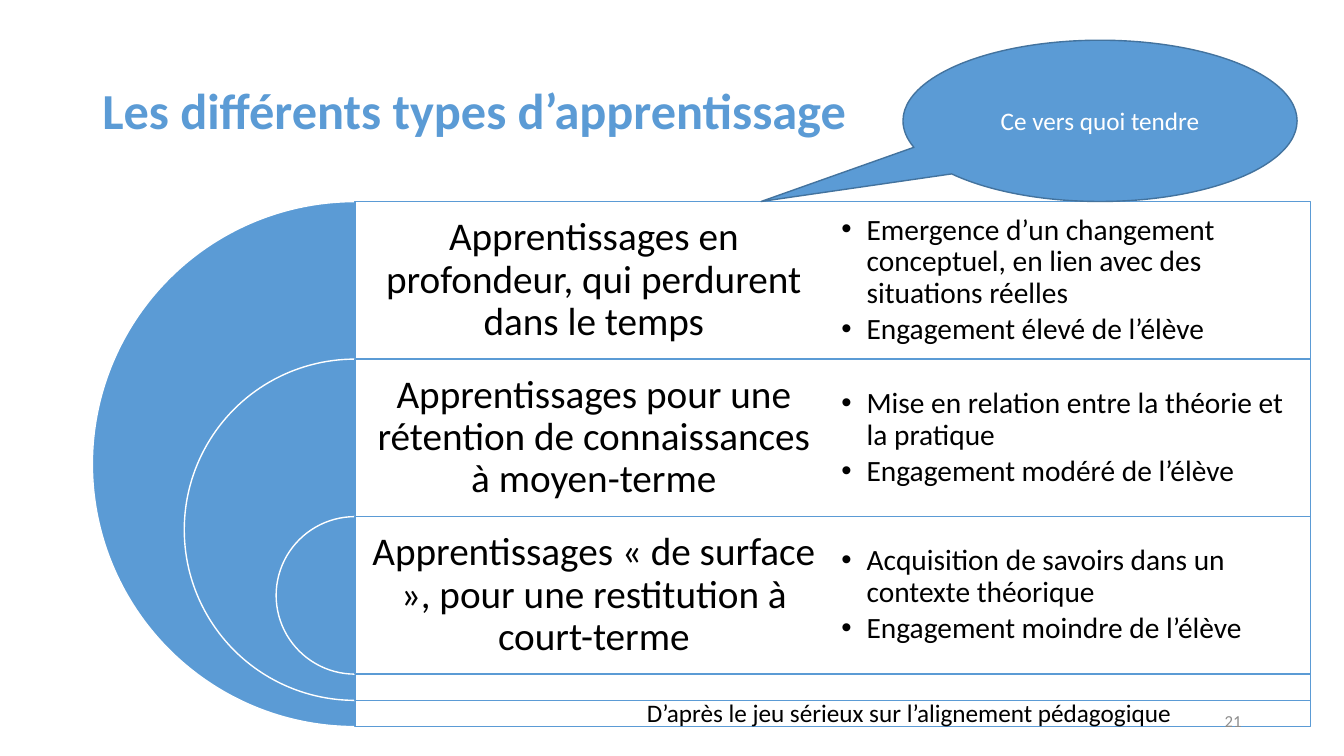
from dataclasses import dataclass

from lxml.etree import SubElement
from pptx import Presentation
from pptx.dml.color import RGBColor
from pptx.enum.shapes import MSO_SHAPE
from pptx.enum.text import MSO_ANCHOR, MSO_AUTO_SIZE, PP_ALIGN
from pptx.oxml.ns import qn
from pptx.shapes.autoshape import Shape
from pptx.slide import Slide
from pptx.text.text import TextFrame
from pptx.util import Pt


@dataclass(frozen=True)
class Theme:
    font: str = "Calibri"
    accent: RGBColor = RGBColor(0x5B, 0x9B, 0xD5)
    outline: RGBColor = RGBColor(0x43, 0x73, 0x9E)
    white: RGBColor = RGBColor(0xFF, 0xFF, 0xFF)
    black: RGBColor = RGBColor(0, 0, 0)
    gray: RGBColor = RGBColor(0x8C, 0x8C, 0x8C)
    title_size: float = 36
    heading_size: float = 28
    bullet_size: float = 21
    body_size: float = 18
    number_size: float = 12


@dataclass(frozen=True)
class Box:
    left: float
    top: float
    width: float
    height: float


@dataclass(frozen=True)
class TextStyle:
    size: float
    color: RGBColor
    bold: bool = False
    align: PP_ALIGN = PP_ALIGN.LEFT
    line_spacing: float = 1.0
    space_after: float = 0
    bulleted: bool = False


@dataclass(frozen=True)
class LearningType:
    heading: str
    bullets: tuple[str, ...]


THEME = Theme()
TITLE = TextStyle(THEME.title_size, THEME.accent, bold=True, line_spacing=0.9)
HEADING = TextStyle(THEME.heading_size, THEME.black, align=PP_ALIGN.CENTER, line_spacing=0.9)
BULLET = TextStyle(THEME.bullet_size, THEME.black, line_spacing=0.9, space_after=3.15, bulleted=True)
CREDIT = TextStyle(THEME.body_size, THEME.black)
NUMBER = TextStyle(THEME.number_size, THEME.gray, align=PP_ALIGN.RIGHT)
CALLOUT = TextStyle(THEME.body_size, THEME.white, align=PP_ALIGN.CENTER)

LEARNING_TYPES = (
    LearningType(
        "Apprentissages en profondeur, qui perdurent dans le temps",
        (
            "Emergence d’un changement conceptuel, en lien avec des situations réelles",
            "Engagement élevé de l’élève",
        ),
    ),
    LearningType(
        "Apprentissages pour une rétention de connaissances à moyen-terme",
        ("Mise en relation entre la théorie et la pratique", "Engagement modéré de l’élève"),
    ),
    LearningType(
        "Apprentissages « de surface », pour une restitution à court-terme",
        ("Acquisition de savoirs dans un contexte théorique", "Engagement moindre de l’élève"),
    ),
)

PANEL_LEFT = 253.5
PANEL_TOP = 144
COLUMN_WIDTH = 341.25
ROW_HEIGHT = 112.5
OUTER_DIAMETER = 375
DIAMETER_STEP = 131.25


def write_text(frame: TextFrame, lines: tuple[str, ...], style: TextStyle) -> None:
    frame.word_wrap = True
    for index, line in enumerate(lines):
        paragraph = frame.paragraphs[0] if index == 0 else frame.add_paragraph()
        paragraph.text = line
        paragraph.alignment = style.align
        paragraph.line_spacing = style.line_spacing
        paragraph.space_after = Pt(style.space_after)
        paragraph.font.name = THEME.font
        paragraph.font.size = Pt(style.size)
        paragraph.font.bold = style.bold
        paragraph.font.color.rgb = style.color
        if style.bulleted:
            paragraph.level = 1
            properties = paragraph._p.get_or_add_pPr()
            properties.set("marL", str(Pt(18)))
            properties.set("indent", str(Pt(-18)))
            SubElement(properties, qn("a:buFont"), typeface="Arial")
            SubElement(properties, qn("a:buChar"), char="•")


def add_text(
    slide: Slide,
    box: Box,
    lines: tuple[str, ...],
    style: TextStyle,
    anchor: MSO_ANCHOR = MSO_ANCHOR.MIDDLE,
    inset: float | None = None,
) -> TextFrame:
    text_box = slide.shapes.add_textbox(Pt(box.left), Pt(box.top), Pt(box.width), Pt(box.height))
    frame = text_box.text_frame
    frame.vertical_anchor = anchor
    if inset is not None:
        frame.margin_left = frame.margin_right = Pt(inset)
        frame.margin_top = frame.margin_bottom = Pt(inset)
    write_text(frame, lines, style)
    return frame


def add_filled_shape(
    slide: Slide,
    kind: MSO_SHAPE,
    box: Box,
    fill: RGBColor,
    line: RGBColor,
    adjustments: tuple[float, ...] = (),
) -> Shape:
    shape = slide.shapes.add_shape(kind, Pt(box.left), Pt(box.top), Pt(box.width), Pt(box.height))
    shape.shadow.inherit = False
    shape.fill.solid()
    shape.fill.fore_color.rgb = fill
    shape.line.color.rgb = line
    shape.line.width = Pt(1)
    for index, value in enumerate(adjustments):
        shape.adjustments[index] = value
    return shape


def add_learning_type(slide: Slide, index: int, learning_type: LearningType) -> None:
    top = PANEL_TOP + index * ROW_HEIGHT
    diameter = OUTER_DIAMETER - index * DIAMETER_STEP
    pie_box = Box(PANEL_LEFT - diameter / 2, top, diameter, diameter)
    add_filled_shape(slide, MSO_SHAPE.PIE, pie_box, THEME.accent, THEME.white, (54, 162))
    panel_box = Box(PANEL_LEFT, top, 2 * COLUMN_WIDTH, diameter)
    panel = add_filled_shape(slide, MSO_SHAPE.RECTANGLE, panel_box, THEME.white, THEME.accent)
    panel_color = panel._element.spPr.find(qn("a:solidFill")).find(qn("a:srgbClr"))
    SubElement(panel_color, qn("a:alpha"), val="90000")
    heading_box = Box(PANEL_LEFT, top, COLUMN_WIDTH, ROW_HEIGHT)
    add_text(slide, heading_box, (learning_type.heading,), HEADING, inset=8.4)
    bullet_box = Box(PANEL_LEFT + COLUMN_WIDTH, top, COLUMN_WIDTH, ROW_HEIGHT)
    add_text(slide, bullet_box, learning_type.bullets, BULLET, inset=6.3)


def main() -> None:
    presentation = Presentation()
    presentation.slide_width = Pt(960)
    presentation.slide_height = Pt(540)
    slide = presentation.slides.add_slide(presentation.slide_layouts[6])

    add_text(slide, Box(66, 28.75, 828, 104.4), ("Les différents types d’apprentissage",), TITLE)
    for index, learning_type in enumerate(LEARNING_TYPES):
        add_learning_type(slide, index, learning_type)
    add_text(slide, Box(678, 500.5, 216, 28.75), ("21",), NUMBER)
    credit = add_text(
        slide,
        Box(455, 494.6, 405.4, 29),
        ("D’après le jeu sérieux sur l’alignement pédagogique",),
        CREDIT,
        MSO_ANCHOR.TOP,
    )
    credit.auto_size = MSO_AUTO_SIZE.SHAPE_TO_FIT_TEXT

    callout = add_filled_shape(
        slide,
        MSO_SHAPE.OVAL_CALLOUT,
        Box(645, 28.75, 281.5, 115.2),
        THEME.accent,
        THEME.outline,
        (-0.86, 0.5),
    )
    callout.text_frame.vertical_anchor = MSO_ANCHOR.MIDDLE
    write_text(callout.text_frame, ("Ce vers quoi tendre",), CALLOUT)
    presentation.save("out.pptx")


if __name__ == "__main__":
    main()
